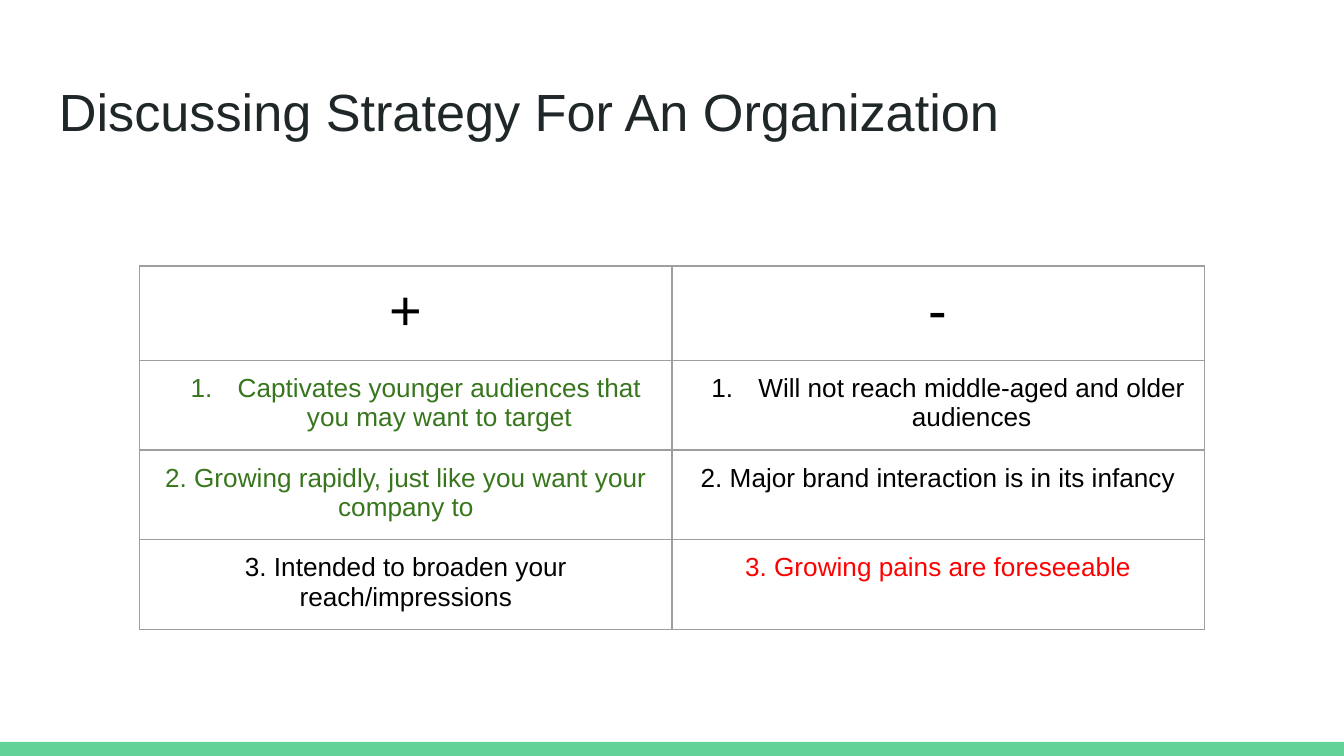
"""Build a slide that weighs the pluses and minuses of a strategy."""
from lxml import etree
from pptx import Presentation
from pptx.dml.color import RGBColor
from pptx.enum import shapes, text
from pptx.oxml import ns
from pptx.util import Inches, Pt

MINT = RGBColor(0x63, 0xD2, 0x97)
INK = RGBColor(0x20, 0x27, 0x29)
BLACK = RGBColor(0, 0, 0)
GREEN = RGBColor(0x38, 0x76, 0x1D)
RED = RGBColor(0xFF, 0, 0)
GREY = RGBColor(0x9E, 0x9E, 0x9E)


def style(para, size, color):
    for run in para.runs:
        run.font.name = "Arial"
        run.font.size = Pt(size)
        run.font.color.rgb = color


def add(parent, tag, **attrs):
    return etree.SubElement(parent, ns.qn(tag), attrs)


deck = Presentation()
deck.slide_width = Inches(10)
deck.slide_height = Inches(10) * 9 // 16
slide = deck.slides.add_slide(deck.slide_layouts[6])

bar = slide.shapes.add_shape(
    shapes.MSO_SHAPE.RECTANGLE, 0, Inches(5.52), Inches(10), Inches(0.11))
bar.shadow.inherit = False
bar.fill.solid()
bar.fill.fore_color.rgb = MINT
bar.line.fill.background()

title = slide.shapes.add_textbox(
    Inches(0.34), Inches(0.49), Inches(9.32), Inches(0.63))
frame = title.text_frame
frame.word_wrap = True
frame.margin_left = frame.margin_right = Inches(0.1)
frame.margin_top = frame.margin_bottom = Inches(0.1)
frame.text = "Discussing Strategy For An Organization"
style(frame.paragraphs[0], 28, INK)

rows = [
    [("+", BLACK), ("-", BLACK)],
    [("Captivates younger audiences that you may want to target", GREEN),
     ("Will not reach middle-aged and older audiences", BLACK)],
    [("2. Growing rapidly, just like you want your company to", GREEN),
     ("2. Major brand interaction is in its infancy", BLACK)],
    [("3. Intended to broaden your reach/impressions", BLACK),
     ("3. Growing pains are foreseeable", RED)],
]
table = slide.shapes.add_table(
    4, 2, Inches(1.04), Inches(1.98), Inches(7.92), Inches(1.68)).table
table.first_row = table.horz_banding = False

for i, row in enumerate(rows):
    for j, (words, color) in enumerate(row):
        cell = table.cell(i, j)
        cell.margin_left = cell.margin_right = Inches(0.1)
        cell.margin_top = cell.margin_bottom = Inches(0.1)
        cell.text_frame.text = words
        para = cell.text_frame.paragraphs[0]
        para.alignment = text.PP_ALIGN.CENTER
        style(para, 14 if i else 30, color)
        if i == 1:
            props = para._p.get_or_add_pPr()
            props.set("marL", str(Inches(0.5)))
            props.set("indent", str(Inches(-0.35)))
            add(add(props, "a:buClr"), "a:srgbClr", val=str(color))
            add(props, "a:buFont", typeface="Arial")
            add(props, "a:buAutoNum", type="arabicPeriod")
        edges = cell._tc.get_or_add_tcPr()
        for side in "LRTB":
            edge = add(edges, f"a:ln{side}", w=str(Pt(0.75)))
            add(add(edge, "a:solidFill"), "a:srgbClr", val=str(GREY))
        cell.fill.background()

deck.save("out.pptx")
